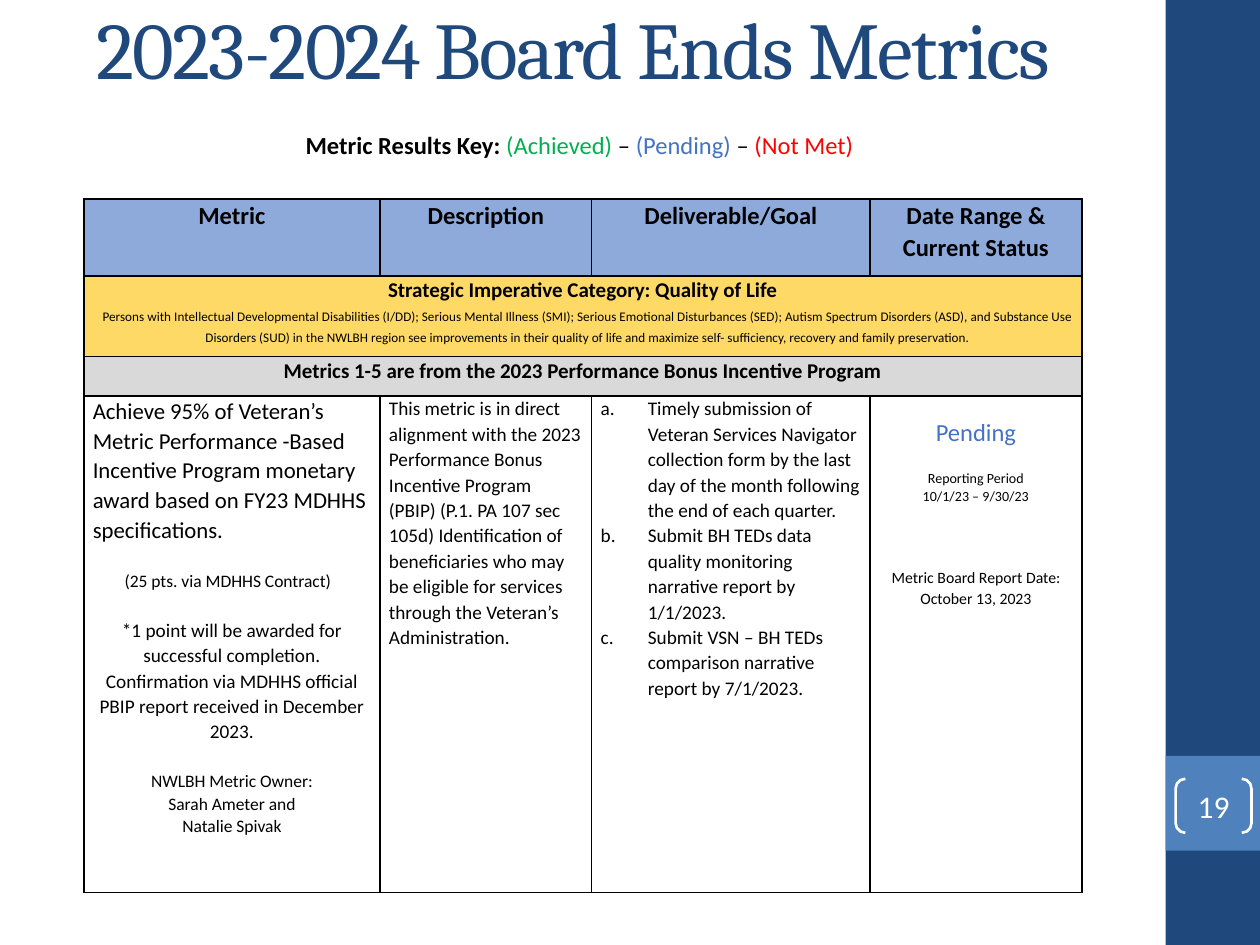
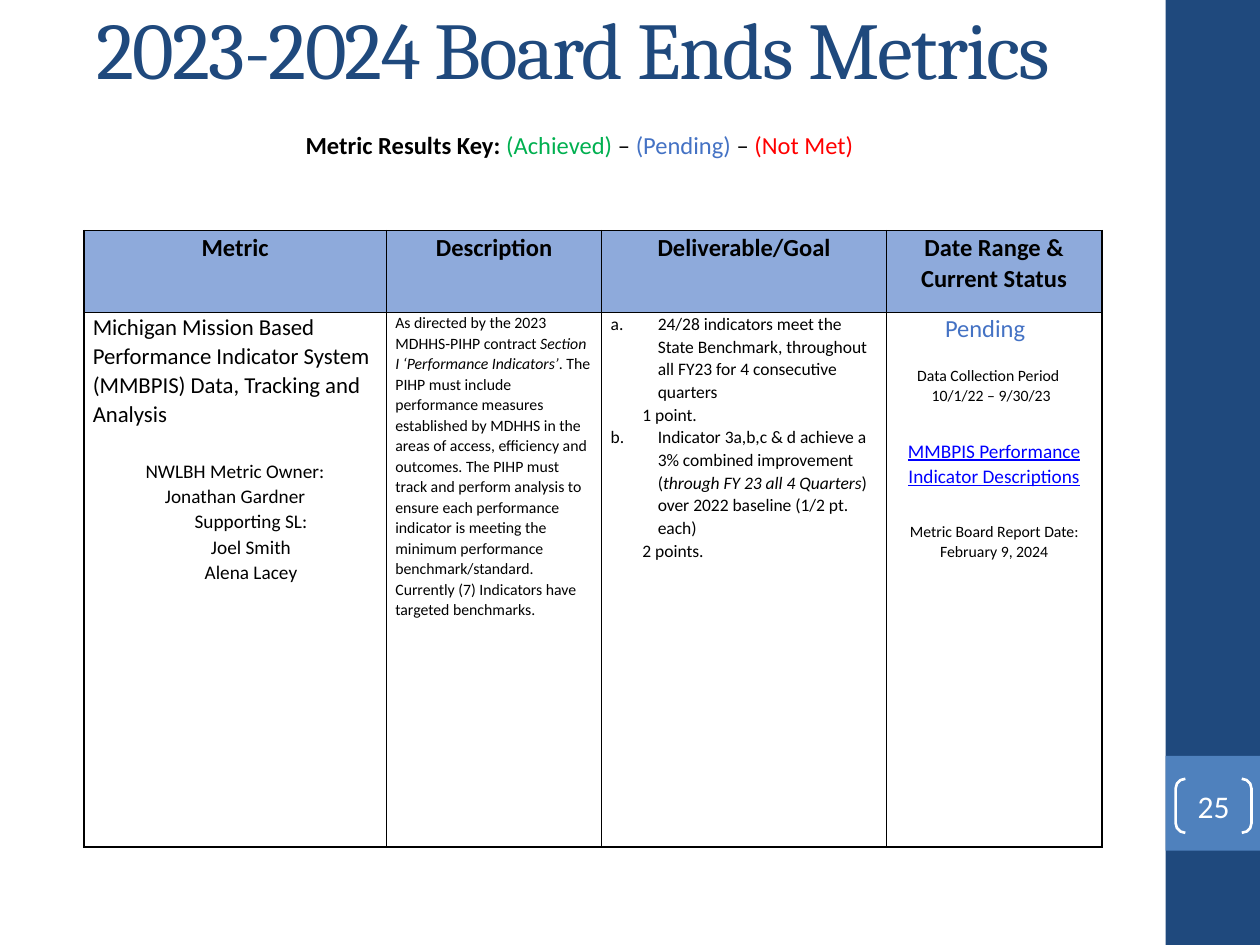
"""Build two board metrics slides with a shared side band, title, results key and table style."""
from lxml.etree import SubElement
from pptx import Presentation
from pptx.dml.color import RGBColor
from pptx.enum.shapes import MSO_SHAPE as Shape
from pptx.enum.text import MSO_ANCHOR as Anchor, MSO_AUTO_SIZE as AutoSize, PP_ALIGN as Align
from pptx.oxml.ns import qn
from pptx.util import Cm, Pt

NAVY, BLUE, WHITE, BLACK = "1F497D", "4F81BD", "FFFFFF", "000000"
HEADER, GOLD, GREY = "8EAADB", "FFD966", "D9D9D9"
ACHIEVED, PENDING, NOT_MET, LINK = "00B050", "4472C4", "FF0000", "0000FF"


def paint(fill, colour):
    """Give a fill one solid colour."""
    fill.solid()
    fill.fore_color.rgb = RGBColor.from_string(colour)


def write(frame, text, size=11, colour=BLACK, font="Calibri", align=Align.LEFT, spacing=1.07,
          before=0, indent=0, start=None, tracking=None, **style):
    """Write one paragraph; text is a string or a list of (text, run style) pairs."""
    paragraph = frame.add_paragraph() if frame.text else frame.paragraphs[0]
    paragraph.alignment = align
    paragraph.line_spacing = spacing
    paragraph.space_before = Pt(before)
    properties = paragraph._p.get_or_add_pPr()
    properties.set("marL", str(Cm(indent)))
    properties.set("indent", "0")
    if start:
        properties.set("indent", str(-Cm(indent)))
        SubElement(properties, qn("a:buAutoNum"), type="alphaLcPeriod", startAt=str(start))
    for words, changes in [(text, {})] if isinstance(text, str) else text:
        look = {"bold": False, "italic": False, "underline": False, "colour": colour, **style, **changes}
        run = paragraph.add_run()
        run.text = words
        run.font.name = font
        run.font.size = Pt(size)
        paint(run.font.fill, look.pop("colour"))
        for name, value in look.items():
            setattr(run.font, name, value)
        if tracking:
            run._r.get_or_add_rPr().set("spc", str(tracking))


centre = {"align": Align.CENTER}
heading = {"size": 14, "bold": True, **centre}
category = {"size": 12, "bold": True, **centre}
item = {"indent": 0.95, "start": 1}
points = {"size": 10, "indent": 0.64}
small = {"size": 9, **centre}
tiny = {"size": 8, **centre}

header_row = (HEADER, [[(label, heading)] for label in
                       ("Metric", "Description", "Deliverable/Goal", "Date Range & Current Status")])

veteran_metric = [
    ("Achieve 95% of Veteran’s Metric Performance -Based Incentive Program monetary award "
     "based on FY23 MDHHS specifications.", {"size": 13}),
    ("(25 pts. via MDHHS Contract)", {"size": 10, "indent": 0.64, "before": 14.4}),
    ("*1 point will be awarded for successful completion. Confirmation via MDHHS official "
     "PBIP report received in December 2023.", {"before": 14.4, **centre}),
    ("NWLBH Metric Owner:", {"size": 10, "before": 14.4, **centre}),
    ("Sarah Ameter and", {"size": 10, **centre}),
    ("Natalie Spivak", {"size": 10, **centre}),
]
veteran_description = [
    ("This metric is in direct alignment with the 2023 Performance Bonus Incentive Program (PBIP) "
     "(P.1. PA 107 sec 105d) Identification of beneficiaries who may be eligible for services "
     "through the Veteran’s Administration.", {}),
]
veteran_goals = [
    ("Timely submission of Veteran Services Navigator collection form by the last day of the month "
     "following the end of each quarter.", item),
    ("Submit BH TEDs data quality monitoring narrative report by 1/1/2023.", item),
    ("Submit VSN – BH TEDs comparison narrative report by 7/1/2023.", item),
]
veteran_status = [
    ("Pending", {"size": 14, "colour": PENDING, **centre}),
    ("Reporting Period", {"before": 11.75, **tiny}),
    ("10/1/23 – 9/30/23", tiny),
    ("Metric Board Report Date:", {"before": 35.2, **small}),
    ("October 13, 2023", small),
]

indicator_metric = [
    ("Michigan Mission Based Performance Indicator System (MMBPIS) Data, Tracking and Analysis",
     {"size": 13, "spacing": 1.05}),
    ("NWLBH Metric Owner:", {"before": 16.7, **centre}),
    ("Jonathan Gardner", centre),
    ("Supporting SL:", {"indent": 0.64, **centre}),
    ("Joel Smith", {"indent": 0.64, **centre}),
    ("Alena Lacey", {"indent": 0.64, **centre}),
]
indicator_description = [
    ([("As directed by the 2023 MDHHS-PIHP contract ", {}),
      ("Section I ‘Performance Indicators’", {"italic": True}),
      (". The PIHP must include performance measures established by MDHHS in the areas of access, "
       "efficiency and outcomes. The PIHP must track and perform analysis to ensure each performance "
       "indicator is meeting the minimum performance benchmark/standard. Currently (7) Indicators "
       "have targeted benchmarks.", {})], {"size": 9}),
]
indicator_goals = [
    ("24/28 indicators meet the State Benchmark, throughout all FY23 for 4 consecutive quarters",
     {**item, "size": 10}),
    ("1 point.", points),
    ([("Indicator 3a,b,c & d achieve a 3% combined improvement (", {}),
      ("through FY 23 all 4 Quarters", {"italic": True}),
      (") over 2022 baseline (1/2 pt. each)", {})], {**item, "size": 10, "start": 2}),
    ("2 points.", points),
]
indicator_status = [
    ("Pending", {"size": 14, "colour": PENDING, "indent": 1}),
    ("Data Collection Period", {"size": 9, "indent": 0.44, "before": 11.75}),
    ("10/1/22 – 9/30/23", {"size": 9, "indent": 0.73}),
    ("MMBPIS Performance Indicator Descriptions",
     {"colour": LINK, "underline": True, "before": 18.3, **centre}),
    ("Metric Board Report Date:", {"before": 18.3, **small}),
    ("February 9, 2024", small),
]

pages = [
    {"number": "19", "top": 4.01, "columns": [5.97, 4.27, 5.61, 4.27],
     "heights": [1.55, 1.63, 0.79, 10.01], "status_inset": 11.75,
     "rows": [
         header_row,
         (GOLD, [[
             ("Strategic Imperative Category: Quality of Life", category),
             ("Persons with Intellectual Developmental Disabilities (I/DD); Serious Mental Illness (SMI); "
              "Serious Emotional Disturbances (SED); Autism Spectrum Disorders (ASD), and Substance Use "
              "Disorders (SUD) in the NWLBH region see improvements in their quality of life and maximize "
              "self- sufficiency, recovery and family preservation.",
              {"size": 7.5, "spacing": Pt(12.4), "indent": 0.18, **centre})]]),
         (GREY, [[("Metrics 1-5 are from the 2023 Performance Bonus Incentive Program", category)]]),
         (None, [veteran_metric, veteran_description, veteran_goals, veteran_status])]},
    {"number": "25", "top": 4.65, "columns": [6.1, 4.34, 5.74, 4.34],
     "heights": [1.65, 10.77], "status_inset": 0,
     "rows": [
         header_row,
         (None, [indicator_metric, indicator_description, indicator_goals, indicator_status])]},
]

presentation = Presentation()
presentation.slide_width, presentation.slide_height = Cm(25.4), Cm(19.05)

for page in pages:
    slide = presentation.slides.add_slide(presentation.slide_layouts[5])

    title = slide.shapes.title
    title.left, title.top, title.width, title.height = Cm(1.69), Cm(-0.64), Cm(21.17), Cm(3.18)
    title.text_frame.auto_size = AutoSize.NONE
    title.text_frame.vertical_anchor = Anchor.MIDDLE
    write(title.text_frame, "2023-2024 Board Ends Metrics", size=46, colour=NAVY, font="Cambria",
          spacing=1.0, tracking=-100)

    for top, height, colour in ((0, 19.05, NAVY), (15.24, 1.91, BLUE)):
        band = slide.shapes.add_shape(Shape.RECTANGLE, Cm(23.5), Cm(top), Cm(1.9), Cm(height))
        band.shadow.inherit = False
        band.line.fill.background()
        paint(band.fill, colour)

    bracket = slide.shapes.add_shape(Shape.DOUBLE_BRACKET, Cm(23.7), Cm(15.7), Cm(1.53), Cm(1.09))
    bracket.shadow.inherit = False
    bracket.adjustments[0] = 0.18
    bracket.fill.background()
    paint(bracket.line.fill, WHITE)
    bracket.line.width = Pt(1.5)
    frame = bracket.text_frame
    frame.margin_left = frame.margin_right = frame.margin_top = frame.margin_bottom = 0
    frame.vertical_anchor = Anchor.MIDDLE
    write(frame, page["number"], size=18, colour=WHITE, spacing=1.0, **centre)

    key = slide.shapes.add_textbox(Cm(-1.02), Cm(2.29), Cm(25.4), Cm(1.27))
    key.text_frame.word_wrap = True
    key.text_frame.vertical_anchor = Anchor.MIDDLE
    write(key.text_frame, [("Metric Results Key: ", {"bold": True}),
                           ("(Achieved) ", {"colour": ACHIEVED}), ("– ", {}),
                           ("(Pending) ", {"colour": PENDING}), ("– ", {}),
                           ("(Not Met)", {"colour": NOT_MET})], size=14, spacing=1.0, **centre)

    columns, heights, rows = page["columns"], page["heights"], page["rows"]
    table = slide.shapes.add_table(len(rows), len(columns), Cm(1.69), Cm(page["top"]),
                                   Cm(sum(columns)), Cm(sum(heights))).table
    table.first_row = table.horz_banding = False
    for column, width in zip(table.columns, columns):
        column.width = Cm(width)
    for row_index, (fill, contents) in enumerate(rows):
        table.rows[row_index].height = Cm(heights[row_index])
        if len(contents) == 1:
            table.cell(row_index, 0).merge(table.cell(row_index, len(columns) - 1))
        for cell in table.rows[row_index].cells:
            cell.margin_left = cell.margin_right = Cm(0.18)
            cell.margin_top = cell.margin_bottom = 0
            for side in ("a:lnL", "a:lnR", "a:lnT", "a:lnB"):
                border = SubElement(cell._tc.get_or_add_tcPr(), qn(side), w=str(Pt(1)))
                SubElement(SubElement(border, qn("a:solidFill")), qn("a:srgbClr"), val=BLACK)
            if fill:
                paint(cell.fill, fill)
            else:
                cell.fill.background()
        for column_index, paragraphs in enumerate(contents):
            for text, style in paragraphs:
                write(table.cell(row_index, column_index).text_frame, text, **style)
    table.cell(len(rows) - 1, len(columns) - 1).margin_top = Pt(page["status_inset"])

presentation.save("out.pptx")
